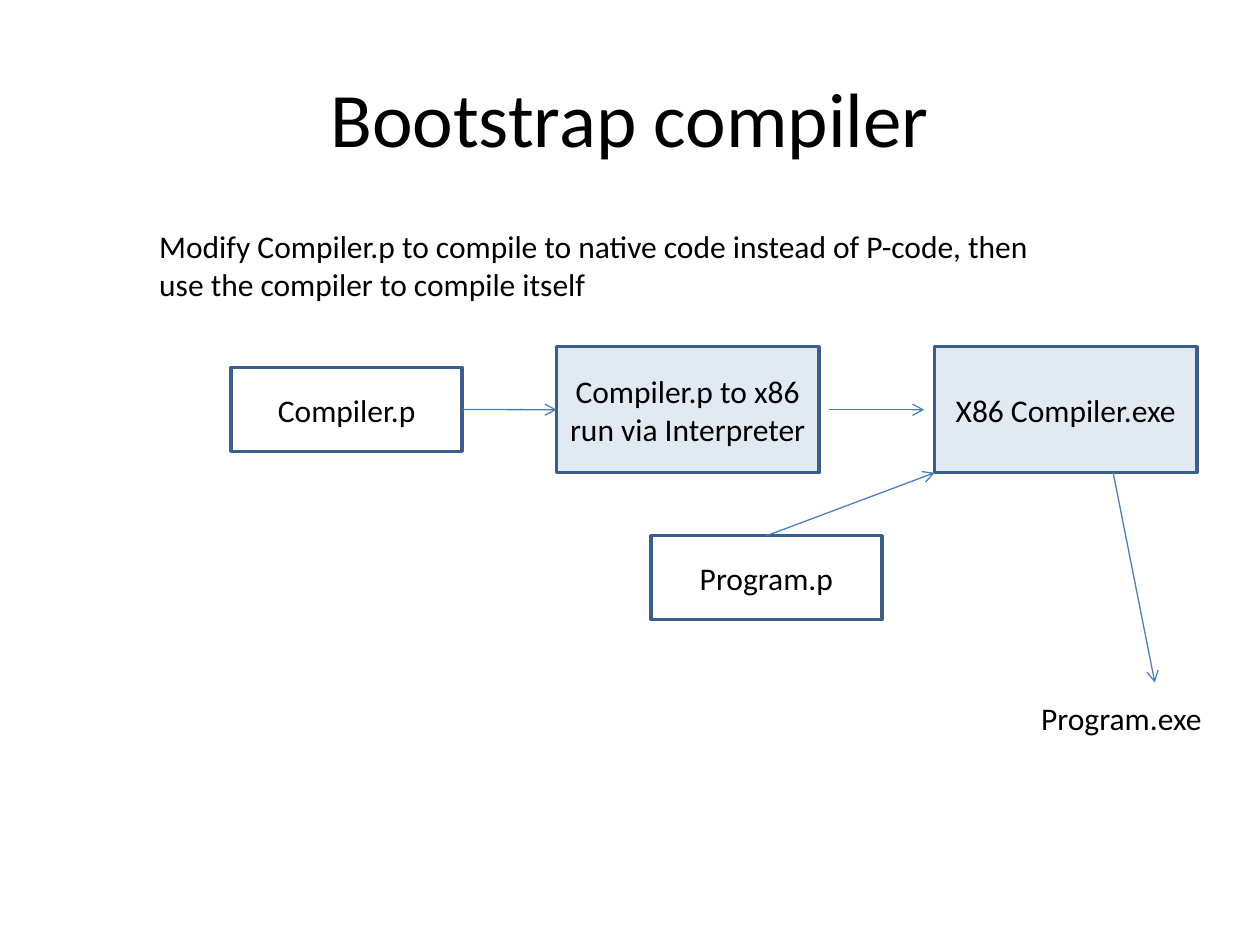
from pptx import Presentation
from pptx.dml.color import RGBColor
from pptx.enum.shapes import MSO_CONNECTOR, MSO_SHAPE
from pptx.enum.text import MSO_ANCHOR, MSO_AUTO_SIZE, PP_ALIGN
from pptx.oxml.ns import qn
from pptx.util import Cm, Pt
from lxml import etree

RECTANGLE, STRAIGHT = MSO_SHAPE.RECTANGLE, MSO_CONNECTOR.STRAIGHT
LEFT, CENTER = PP_ALIGN.LEFT, PP_ALIGN.CENTER
TOP, MIDDLE = MSO_ANCHOR.TOP, MSO_ANCHOR.MIDDLE
FIT_SHAPE = MSO_AUTO_SIZE.SHAPE_TO_FIT_TEXT
LEFT_SITE, RIGHT_SITE = 1, 3

THEME = {
    "font": "Calibri", "title": 44, "body": 18,
    "text": "000000", "tool": "4F81BD", "tool_alpha": 17,
    "outline": "3A5F8C", "outline_width": 2,
    "arrow": "4B7EBC", "arrow_width": 0.75,
}

# Positions and sizes in cm
TITLE = ("Bootstrap compiler", (1.27, 0.76, 22.86, 3.18))
SOURCE_SIZE, TOOL_SIZE = (4.66, 1.69), (5.29, 2.54)
SOURCES = {
    "compiler source": (["Compiler.p"], (4.66, 7.41)),
    "program source": (["Program.p"], (13.12, 10.8)),
}
TOOLS = {
    "interpreted compiler": (["Compiler.p to x86", "run via Interpreter"], (11.22, 6.99)),
    "native compiler": (["X86 Compiler.exe"], (18.84, 6.99)),
}
LABELS = [
    (["Modify Compiler.p to compile to native code instead of P-code, then",
      "use the compiler to compile itself"], (2.96, 4.45, 18.27, 1.8)),
    (["Program.exe"], (20.74, 13.97, 3.79, 1.03)),
]
FLOWS = [
    ((16.72, 8.26), (18.63, 8.26)),
    ((15.45, 10.8), (18.84, 9.53)),
    ((22.44, 9.53), (23.28, 13.76)),
]


def color(key):
    return RGBColor.from_string(THEME[key])


def write(shape, lines, size="body", align=LEFT, anchor=TOP, wrap=True):
    frame = shape.text_frame
    frame.text = "\n".join(lines)
    frame.word_wrap = wrap
    frame.vertical_anchor = anchor
    for paragraph in frame.paragraphs:
        paragraph.alignment = align
        for run in paragraph.runs:
            run.font.name = THEME["font"]
            run.font.size = Pt(THEME[size])
            run.font.color.rgb = color("text")


def add_box(shapes, lines, position, size, tinted):
    box = shapes.add_shape(RECTANGLE, *map(Cm, position + size))
    box.shadow.inherit = False
    box.line.color.rgb = color("outline")
    box.line.width = Pt(THEME["outline_width"])
    if tinted:
        box.fill.solid()
        box.fill.fore_color.rgb = color("tool")
        tint = next(box.element.spPr.iter(qn("a:srgbClr")))
        etree.SubElement(tint, qn("a:alpha"), val=str(THEME["tool_alpha"] * 1000))
    else:
        box.fill.background()
    write(box, lines, align=CENTER, anchor=MIDDLE)
    return box


def add_arrow(shapes, start=(0, 0), end=(0, 0)):
    arrow = shapes.add_connector(STRAIGHT, *map(Cm, start + end))
    arrow.line.color.rgb = color("arrow")
    arrow.line.width = Pt(THEME["arrow_width"])
    etree.SubElement(arrow.line._get_or_add_ln(), qn("a:tailEnd"), type="arrow")
    etree.SubElement(arrow._element.spPr, qn("a:effectLst"))
    return arrow


def main():
    deck = Presentation()
    deck.slide_width, deck.slide_height = Cm(25.4), Cm(19.05)
    slide = deck.slides.add_slide(deck.slide_layouts.get_by_name("Title Only"))
    shapes = slide.shapes

    heading, bounds = TITLE
    title = shapes.title
    title.left, title.top, title.width, title.height = map(Cm, bounds)
    write(title, [heading], size="title", align=CENTER, anchor=MIDDLE)

    boxes = {}
    for group, size, tinted in ((SOURCES, SOURCE_SIZE, False), (TOOLS, TOOL_SIZE, True)):
        for role, (lines, position) in group.items():
            boxes[role] = add_box(shapes, lines, position, size, tinted)

    for lines, bounds in LABELS:
        label = shapes.add_textbox(*map(Cm, bounds))
        write(label, lines, wrap=False)
        label.text_frame.auto_size = FIT_SHAPE

    compile_step = add_arrow(shapes)
    compile_step.begin_connect(boxes["compiler source"], RIGHT_SITE)
    compile_step.end_connect(boxes["interpreted compiler"], LEFT_SITE)
    for start, end in FLOWS:
        add_arrow(shapes, start, end)

    deck.save("out.pptx")


if __name__ == "__main__":
    main()
